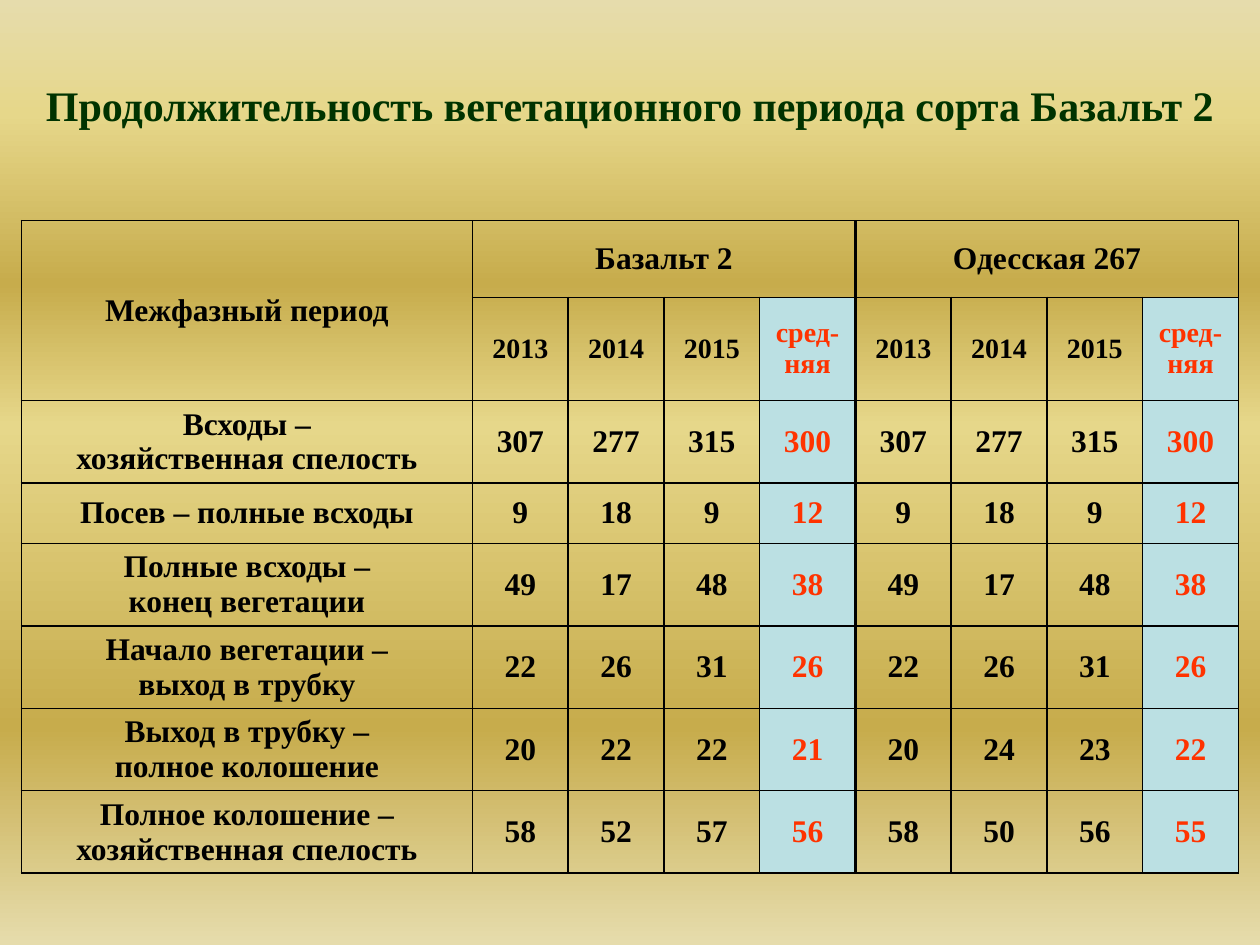
from lxml import etree
from pptx import Presentation
from pptx import util as u
from pptx.dml.color import RGBColor
from pptx.enum import text
from pptx.oxml.ns import qn

# Content
TITLE = "Продолжительность вегетационного периода сорта Базальт 2"
PERIOD = "Межфазный период"
VARIETIES = ["Базальт 2", "Одесская 267"]
YEARS = ["2013", "2014", "2015", "сред-\nняя"]
ROWS = [
    ("Всходы –\nхозяйственная спелость", 307, 277, 315, 300, 307, 277, 315, 300),
    ("Посев – полные всходы", 9, 18, 9, 12, 9, 18, 9, 12),
    ("Полные всходы –\nконец вегетации", 49, 17, 48, 38, 49, 17, 48, 38),
    ("Начало вегетации –\nвыход в трубку", 22, 26, 31, 26, 22, 26, 31, 26),
    ("Выход в трубку –\nполное колошение", 20, 22, 22, 21, 20, 24, 23, 22),
    ("Полное колошение –\nхозяйственная спелость", 58, 52, 57, 56, 58, 50, 56, 55),
]

# Look
COLORS = {"title": "003300", "text": "000000", "mean": "FF3300",
          "mean_fill": "BBE0E3", "line": "000000"}
GRADIENT = [(0, "E6DCAC"), (12, "E6D78A"), (30, "C7AC4C"),
            (45, "E6D78A"), (77, "C7AC4C"), (100, "E6DCAC")]
FONT = "Times New Roman"
THIN, NORMAL, THICK = 0.25, 1, 2.25

# Grid, in inches
LEFT, TOP, WIDTH, HEIGHT = 0.17, 1.75, 9.67, 5.41
GROUP = len(YEARS)
COLS = [3.58] + [0.76] * GROUP * len(VARIETIES)
HEIGHTS = [0.61, 0.82] + [0.48] * len(ROWS)


def write(tf, content, size=18, color="text"):
    """Fill a text frame, one centred paragraph per line."""
    tf.word_wrap = True
    for i, line in enumerate(content.split("\n")):
        p = tf.paragraphs[0] if i == 0 else tf.add_paragraph()
        p.alignment = text.PP_ALIGN.CENTER
        r = p.add_run()
        r.text = line
        r.font.name, r.font.size, r.font.bold = FONT, u.Pt(size), True
        r.font.color.rgb = RGBColor.from_string(COLORS[color])


def add_solid(parent, color):
    fill = etree.SubElement(parent, qn("a:solidFill"))
    etree.SubElement(fill, qn("a:srgbClr"), val=color)


def set_borders(cell, **widths):
    """Border widths in points, given as L, R, T and B."""
    tc_pr = cell._tc.get_or_add_tcPr()
    for i, side in enumerate("LRTB"):
        ln = etree.Element(qn("a:ln" + side), w=str(u.Pt(widths.get(side, NORMAL))))
        add_solid(ln, COLORS["line"])
        tc_pr.insert(i, ln)


def set_background(s):
    fill = s.background.fill
    fill.gradient()
    stops = s.element.find(".//" + qn("a:gsLst"))
    for old in list(stops):
        stops.remove(old)
    for pos, color in GRADIENT:
        gs = etree.SubElement(stops, qn("a:gs"), pos=str(pos * 1000))
        etree.SubElement(gs, qn("a:srgbClr"), val=color)
    s.element.find(".//" + qn("a:lin")).set("ang", str(90 * 60000))


def add_table(s):
    frame = s.shapes.add_table(len(HEIGHTS), len(COLS), u.Inches(LEFT), u.Inches(TOP),
                               u.Inches(WIDTH), u.Inches(HEIGHT))
    table = frame.table
    table.first_row = table.horz_banding = False
    for col, width in zip(table.columns, COLS):
        col.width = u.Inches(width)
    for row, height in zip(table.rows, HEIGHTS):
        row.height = u.Inches(height)
    frame.height = u.Inches(HEIGHT)

    # Header texts sit in the first cell of each merged area
    heads = [PERIOD]
    for name in VARIETIES:
        heads += [name] + [""] * (GROUP - 1)
    grid = [heads, [""] + YEARS * len(VARIETIES)] + ROWS

    for y, values in enumerate(grid):
        for x, value in enumerate(values):
            cell = table.cell(y, x)
            cell.vertical_anchor = text.MSO_ANCHOR.MIDDLE
            mean = y > 0 and x > 0 and x % GROUP == 0
            if mean:
                cell.fill.solid()
                cell.fill.fore_color.rgb = RGBColor.from_string(COLORS["mean_fill"])
            else:
                cell.fill.background()
            if value != "":
                write(cell.text_frame, str(value), size=16 if y == 1 else 18,
                      color="mean" if mean else "text")
            set_borders(cell, L=THICK if x == GROUP + 1 else NORMAL,
                        R=THICK if x == GROUP else NORMAL,
                        T=THIN if y == 0 and x > 0 else NORMAL)

    table.cell(0, 0).merge(table.cell(1, 0))
    for i in range(len(VARIETIES)):
        first = 1 + i * GROUP
        table.cell(0, first).merge(table.cell(0, first + GROUP - 1))
        # The merged cell takes the right border of its last column
        if i == 0:
            table.cell(0, first)._tc.tcPr.find(qn("a:lnR")).set("w", str(u.Pt(THICK)))


def main():
    prs = Presentation()
    prs.slide_width, prs.slide_height = u.Inches(10), u.Inches(7.5)
    s = prs.slides.add_slide(prs.slide_layouts[5])
    set_background(s)

    # Title
    title = s.shapes.title
    title.left, title.top = 0, u.Inches(0.33)
    title.width, title.height = prs.slide_width, u.Inches(1)
    title.text_frame.vertical_anchor = text.MSO_ANCHOR.MIDDLE
    write(title.text_frame, TITLE, size=24, color="title")

    add_table(s)
    prs.save("out.pptx")


if __name__ == "__main__":
    main()
